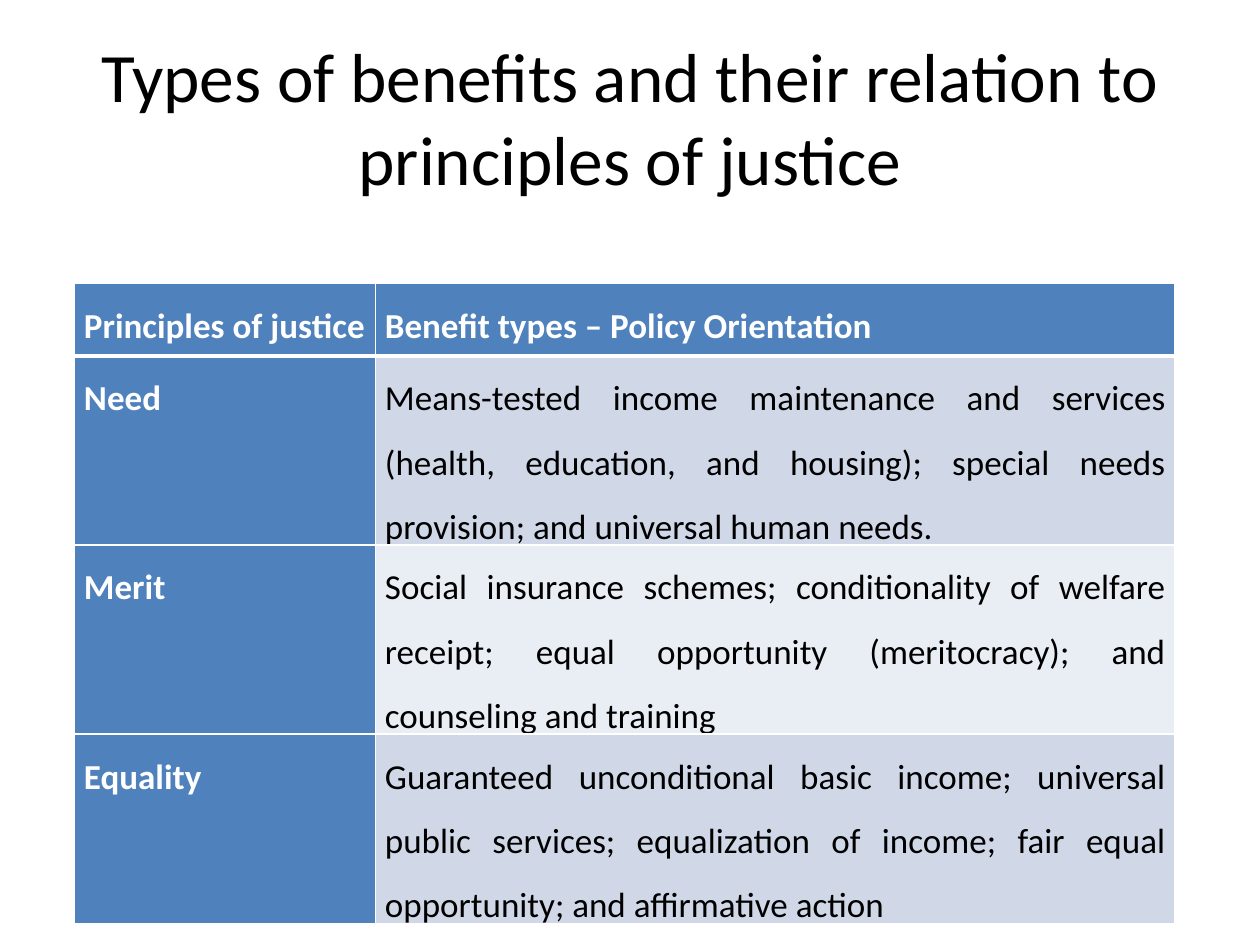
from typing import NamedTuple

from lxml import etree
from pptx import Presentation
from pptx.dml.color import RGBColor
from pptx.enum import text
from pptx.oxml import ns
from pptx.util import Pt

FONT = "Calibri"
WHITE = RGBColor(0xFF, 0xFF, 0xFF)
BLACK = RGBColor(0x00, 0x00, 0x00)
BLUE = RGBColor(0x4F, 0x81, 0xBD)
BAND_DARK = RGBColor(0xD0, 0xD8, 0xE8)
BAND_LIGHT = RGBColor(0xE9, 0xED, 0xF4)

COLUMN_WIDTHS = (Pt(172), Pt(457))
HEADER_HEIGHT, ROW_HEIGHT = Pt(41.5), Pt(88)
THIN, THICK = Pt(1), Pt(3)


class Principle(NamedTuple):
    name: str
    benefits: str


HEADER = Principle("Principles of justice", "Benefit types – Policy Orientation")
PRINCIPLES = (
    Principle("Need", "Means-tested income maintenance and services (health, education, "
              "and housing); special needs provision; and universal human needs."),
    Principle("Merit", "Social insurance schemes; conditionality of welfare receipt; "
              "equal opportunity (meritocracy); and counseling and training"),
    Principle("Equality", "Guaranteed unconditional basic income; universal public services; "
              "equalization of income; fair equal opportunity; and affirmative action"),
)


def set_borders(cell, top: int, bottom: int) -> None:
    """Put white lines around a cell, ahead of its fill as the schema asks."""
    tc_pr = cell._tc.get_or_add_tcPr()
    widths = {"lnL": THIN, "lnR": THIN, "lnT": top, "lnB": bottom}
    for i, (tag, width) in enumerate(widths.items()):
        ln = etree.Element(ns.qn(f"a:{tag}"), w=str(int(width)))
        fill = etree.SubElement(ln, ns.qn("a:solidFill"))
        etree.SubElement(fill, ns.qn("a:srgbClr"), val=str(WHITE))
        tc_pr.insert(i, ln)


def fill_cell(cell, content: str, fill: RGBColor, strong: bool) -> None:
    cell.text = content
    cell.margin_left = cell.margin_right = Pt(5.4)
    cell.margin_top = cell.margin_bottom = 0
    cell.fill.solid()
    cell.fill.fore_color.rgb = fill
    p = cell.text_frame.paragraphs[0]
    p.alignment = text.PP_ALIGN.JUSTIFY
    p.line_spacing = 1.5
    p.font.name, p.font.size, p.font.bold = FONT, Pt(20), strong
    p.font.color.rgb = WHITE if strong else BLACK


def add_title(s, content: str) -> None:
    tf = s.shapes.add_textbox(Pt(36), Pt(21.6), Pt(648), Pt(90)).text_frame
    tf.word_wrap = True
    tf.vertical_anchor = text.MSO_ANCHOR.MIDDLE
    p = tf.paragraphs[0]
    p.text = content
    p.alignment = text.PP_ALIGN.CENTER
    p.font.name, p.font.size = FONT, Pt(39.6)
    p.font.color.rgb = BLACK


def add_principles_table(s) -> None:
    rows = (HEADER, *PRINCIPLES)
    table = s.shapes.add_table(len(rows), len(COLUMN_WIDTHS), Pt(42.6), Pt(162),
                               sum(COLUMN_WIDTHS), Pt(366)).table
    for column, width in zip(table.columns, COLUMN_WIDTHS):
        column.width = width
    for i, principle in enumerate(rows):
        is_header = i == 0
        table.rows[i].height = HEADER_HEIGHT if is_header else ROW_HEIGHT
        band = BAND_DARK if i % 2 else BAND_LIGHT
        for j, content in enumerate(principle):
            strong = is_header or j == 0
            cell = table.cell(i, j)
            fill_cell(cell, content, BLUE if strong else band, strong)
            set_borders(cell, top=THICK if i == 1 else THIN,
                        bottom=THICK if is_header else THIN)


def main() -> None:
    prs = Presentation()
    prs.slide_width, prs.slide_height = Pt(720), Pt(540)
    s = prs.slides.add_slide(prs.slide_layouts[6])
    add_title(s, "Types of benefits and their relation to principles of justice")
    add_principles_table(s)
    prs.save("out.pptx")


if __name__ == "__main__":
    main()
